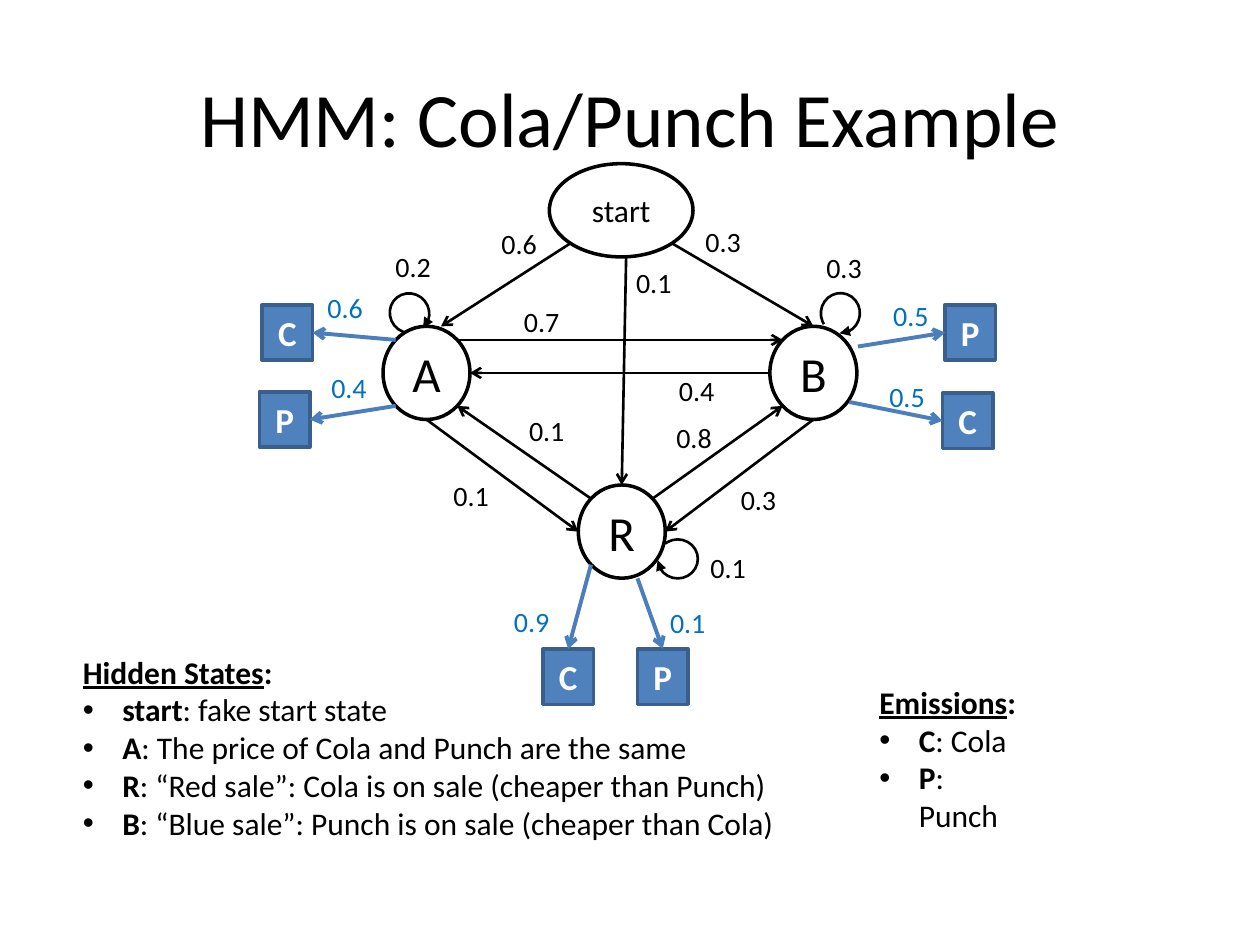
from dataclasses import dataclass
from math import cos, radians, sin

from lxml.etree import SubElement
from pptx import Presentation
from pptx.dml.color import RGBColor
from pptx.enum.shapes import MSO_CONNECTOR, MSO_SHAPE
from pptx.enum.text import MSO_ANCHOR, MSO_AUTO_SIZE, PP_ALIGN
from pptx.oxml.ns import qn
from pptx.util import Pt


@dataclass(frozen=True)
class Theme:
    font: str = "Calibri"
    black: str = "000000"
    white: str = "FFFFFF"
    box: str = "4F81BD"
    box_edge: str = "3A5F8C"
    arrow: str = "4B7EBC"
    emission: str = "0070C0"
    title: int = 44
    state: int = 28
    symbol: int = 20
    body: int = 18
    label: int = 16


T = Theme()
TITLE = "HMM: Cola/Punch Example"

STATES = {
    "start": (355, 120.2, 82.1, 53.3, T.body),
    "A": (243.7, 213.1, 49.7, 53.3, T.state),
    "B": (464.8, 213.1, 49.7, 53.3, T.state),
    "R": (355.3, 303.8, 49.7, 53.3, T.state),
}
SITES = {"right": 0, "lower right": 45, "bottom": 90, "lower left": 135,
         "left": 180, "upper left": 225, "top": 270, "upper right": 315}

TRANSITIONS = [
    (("start", "lower left"), (252, 186.5), "0.6", (279.4, 126)),
    (("start", "lower right"), ("B", "top"), "0.3", (396, 124.6)),
    ((357.8, 146.9), ("R", "top"), "0.1", (356.4, 148.3)),
    (("B", "bottom"), ("R", "right"), "0.3", (416.2, 272.2)),
    (("R", "upper left"), ("A", "lower right"), "0.1", (295.2, 232.6)),
    (("A", "bottom"), ("R", "left"), "0.1", (252, 270)),
    (("R", "upper right"), ("B", "lower left"), "0.8", (379.4, 236.9)),
    (("A", "upper right"), ("B", "upper left"), "0.7", (292.3, 170.6)),
    (("B", "left"), ("A", "right"), "0.4", (380.9, 210.2)),
]
LOOPS = [
    ((375.8, 308.2), 0, "0.1", (398.9, 311)),
    ((222.5, 167.8), 231.1, "0.2", (218.9, 139)),
    ((468.7, 167.8), 275.7, "0.3", (465.1, 139.7)),
]
TOP, LEFT, RIGHT = 0, 1, 3
EMISSIONS = [
    ("C", (149.8, 174.2), RIGHT, ("A", "upper left"), "0.6", (180, 162.7)),
    ("P", (148.3, 223.9), RIGHT, ("A", "lower left"), "0.4", (182.2, 208.1)),
    ("P", (540, 174.2), LEFT, (490.3, 198), "0.5", (503.3, 167)),
    ("C", (538.6, 224.6), LEFT, (485.3, 229.7), "0.5", (501.1, 213.1)),
    ("C", (310.3, 370.8), TOP, ("R", "lower left"), "0.9", (286.6, 342)),
    ("P", (364.3, 370.8), TOP, (364.3, 330.5), "0.1", (375.8, 342.7)),
]
LEGENDS = [
    ((40.3, 369.4, 410.4, 116.6), "Hidden States", [
        ("start", "fake start state"),
        ("A", "The price of Cola and Punch are the same"),
        ("R", "“Red sale”: Cola is on sale (cheaper than Punch)"),
        ("B", "“Blue sale”: Punch is on sale (cheaper than Cola)"),
    ]),
    ((495.4, 386.6, 94.3, 72.7), "Emissions", [("C", "Cola"), ("P", "Punch")]),
]
BOX_SIZE = (28.8, 31.7)
LABEL_SIZE = (35.3, 26.6)
LOOP_SIZE = (23, 22.3)
LOOP_ANGLES = (138.327, 105.937)
INDENT = 22.5


def points(*values):
    return [Pt(v) for v in values]


def anchor(place):
    if place[0] not in STATES:
        return place
    x, y, w, h, _ = STATES[place[0]]
    angle = radians(SITES[place[1]])
    return x + w / 2 * cos(angle), y + h / 2 * sin(angle)


def add_run(p, text, size, color=T.black, bold=False, underline=False):
    r = p.add_run()
    r.text = text
    r.font.name = T.font
    r.font.size = Pt(size)
    r.font.bold = bold
    r.font.underline = underline
    r.font.color.rgb = RGBColor.from_string(color)


def style_line(sp, color, width, head=None):
    sp.line.color.rgb = RGBColor.from_string(color)
    sp.line.width = Pt(width)
    if head:
        SubElement(sp.line._get_or_add_ln(), qn("a:tailEnd"), type=head)


def add_outline(s, kind, box, fill=None, edge=T.black, width=2, head=None):
    sp = s.shapes.add_shape(kind, *points(*box))
    sp.shadow.inherit = False
    if fill:
        sp.fill.solid()
        sp.fill.fore_color.rgb = RGBColor.from_string(fill)
    else:
        sp.fill.background()
    style_line(sp, edge, width, head)
    return sp


def center_text(sp, text, size, color=T.black, bold=False):
    tf = sp.text_frame
    tf.vertical_anchor = MSO_ANCHOR.MIDDLE
    p = tf.paragraphs[0]
    p.alignment = PP_ALIGN.CENTER
    add_run(p, text, size, color, bold)


def add_arrow(s, begin, end, color, width):
    sp = s.shapes.add_connector(MSO_CONNECTOR.STRAIGHT, *points(*begin, *end))
    style_line(sp, color, width, "arrow")
    SubElement(sp._element.spPr, qn("a:effectLst"))
    return sp


def add_text_frame(s, box):
    tf = s.shapes.add_textbox(*points(*box)).text_frame
    tf.word_wrap = False
    tf.auto_size = MSO_AUTO_SIZE.SHAPE_TO_FIT_TEXT
    return tf


def add_label(s, text, at, color=T.black):
    p = add_text_frame(s, (*at, *LABEL_SIZE)).paragraphs[0]
    add_run(p, text, T.label, color)


def add_legend(s, box, heading, items):
    tf = add_text_frame(s, box)
    p = tf.paragraphs[0]
    add_run(p, heading, T.body, bold=True, underline=True)
    add_run(p, ":", T.body, bold=True)
    for name, meaning in items:
        p = tf.add_paragraph()
        pPr = p._p.get_or_add_pPr()
        pPr.set("marL", str(Pt(INDENT)))
        pPr.set("indent", str(-Pt(INDENT)))
        SubElement(pPr, qn("a:buFont"), typeface="Arial")
        SubElement(pPr, qn("a:buChar"), char="•")
        add_run(p, name, T.body, bold=True)
        add_run(p, f": {meaning}", T.body)


def main():
    prs = Presentation()
    prs.slide_width, prs.slide_height = points(720, 540)
    s = prs.slides.add_slide(prs.slide_layouts[5])
    title = s.shapes.title
    title.left, title.top, title.width, title.height = points(36, 21.6, 648, 90)
    center_text(title, TITLE, T.title)

    for name, (x, y, w, h, size) in STATES.items():
        sp = add_outline(s, MSO_SHAPE.OVAL, (x - w / 2, y - h / 2, w, h))
        center_text(sp, name, size)
    for begin, end, chance, at in TRANSITIONS:
        add_arrow(s, anchor(begin), anchor(end), T.black, 1.5)
        add_label(s, chance, at)
    for corner, turn, chance, at in LOOPS:
        sp = add_outline(s, MSO_SHAPE.ARC, (*corner, *LOOP_SIZE), width=1.5, head="triangle")
        sp.adjustments[0], sp.adjustments[1] = LOOP_ANGLES
        sp.rotation = turn
        add_label(s, chance, at)
    for symbol, corner, side, begin, chance, at in EMISSIONS:
        sp = add_outline(s, MSO_SHAPE.RECTANGLE, (*corner, *BOX_SIZE), T.box, T.box_edge)
        center_text(sp, symbol, T.symbol, T.white, True)
        add_arrow(s, anchor(begin), corner, T.arrow, 2.25).end_connect(sp, side)
        add_label(s, chance, at, T.emission)
    for legend in LEGENDS:
        add_legend(s, *legend)
    prs.save("out.pptx")


if __name__ == "__main__":
    main()
